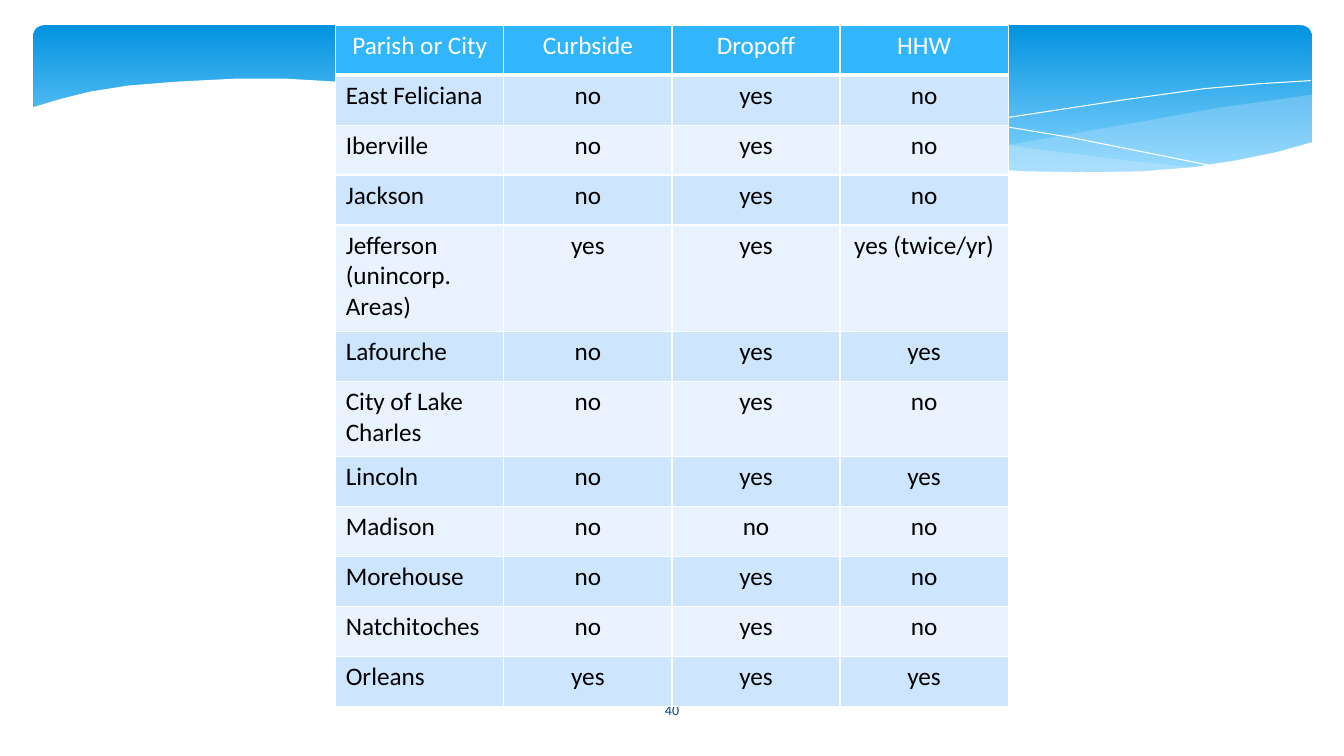
from lxml.etree import SubElement
from pptx import Presentation
from pptx.dml.color import RGBColor
from pptx.enum.shapes import MSO_SHAPE
from pptx.enum.text import MSO_ANCHOR, PP_ALIGN
from pptx.oxml.ns import qn
from pptx.util import Inches, Pt

COLORS = {
    "banner_top": "0293E0",
    "banner_bottom": "83D3FE",
    "haze": "C6E7FC",
    "white": "FFFFFF",
    "black": "000000",
    "page_number": "073E87",
    "header": "31B6FD",
    "odd_row": "CEE5FE",
    "even_row": "E8F3FF",
}
FONT = "Calibri"

RIGHT_HAZE = [
    (1267, 69), (1232, 74), (1175, 82), (1114, 93), (1040, 106), (972, 118),
    (908, 127), (849, 135), (907, 140), (976, 145), (1038, 147), (1093, 146),
    (1141, 142), (1185, 137), (1224, 129), (1268, 117), (1268, 69),
]
LONG_HAZE = [
    (1157, 142), (1083, 134), (1001, 124), (908, 109), (806, 91), (745, 81),
    (688, 72), (619, 64), (556, 58), (499, 55), (426, 55), (349, 61),
    (423, 69), (506, 81), (566, 91), (673, 110), (769, 125), (854, 136),
    (930, 143), (997, 147), (1057, 148), (1110, 146),
]
FALLING_LINE = [
    (379, 65), (414, 60), (466, 57), (522, 56), (592, 58), (677, 63),
    (778, 73), (894, 89), (1027, 111), (1177, 141),
]
RISING_LINE = [
    (785, 126), (863, 110), (964, 92), (1082, 74), (1161, 63), (1217, 58),
    (1267, 55),
]
WHITE_WAVE = [
    (1269, 116), (1233, 126), (1194, 134), (1150, 141), (1101, 145),
    (1045, 146), (982, 145), (911, 140), (830, 131), (739, 119), (638, 103),
    (563, 89), (488, 77), (420, 67), (357, 60), (300, 56), (249, 53),
    (202, 53), (143, 56), (94, 60), (56, 66), (28, 73), (-2, 82), (-2, 199),
    (1270, 199),
]

ROWS = [
    ("Parish or City", "Curbside", "Dropoff", "HHW"),
    ("East Feliciana", "no", "yes", "no"),
    ("Iberville", "no", "yes", "no"),
    ("Jackson", "no", "yes", "no"),
    ("Jefferson (unincorp. Areas)", "yes", "yes", "yes (twice/yr)"),
    ("Lafourche", "no", "yes", "yes"),
    ("City of Lake Charles", "no", "yes", "no"),
    ("Lincoln", "no", "yes", "yes"),
    ("Madison", "no", "no", "no"),
    ("Morehouse", "no", "yes", "no"),
    ("Natchitoches", "no", "yes", "no"),
    ("Orleans", "yes", "yes", "yes"),
]
TALL_ROWS = {4: 1.06, 6: 0.74}


def color(name):
    return RGBColor.from_string(COLORS[name])


def style_text(paragraph, size, color_name, alignment):
    paragraph.alignment = alignment
    for span in paragraph.runs:
        span.font.name = FONT
        span.font.size = Pt(size)
        span.font.bold = False
        span.font.color.rgb = color(color_name)


def add_outline(page, points, left, top, closed):
    builder = page.shapes.build_freeform(*points[0], scale=Inches(0.01))
    builder.add_line_segments(points[1:], close=closed)
    outline = builder.convert_to_shape(Inches(left), Inches(top))
    outline.shadow.inherit = False
    return outline


def add_area(page, points, left, top, color_name, opacity):
    area = add_outline(page, points, left, top, True)
    area.line.fill.background()
    area.fill.solid()
    area.fill.fore_color.rgb = color(color_name)
    if opacity < 100:
        fill_color = area.fill._xPr.find(qn("a:solidFill"))[0]
        SubElement(fill_color, qn("a:alpha"), val=str(opacity * 1000))


def add_hairline(page, points, left, top):
    hairline = add_outline(page, points, left, top, False)
    hairline.fill.background()
    hairline.line.color.rgb = color("white")
    hairline.line.width = Pt(0)


def add_banner(page, left, top, width, height):
    banner = page.shapes.add_shape(
        MSO_SHAPE.ROUNDED_RECTANGLE,
        Inches(left), Inches(top), Inches(width), Inches(height))
    banner.adjustments[0] = 0.07
    banner.shadow.inherit = False
    banner.line.fill.background()
    banner.fill.gradient()
    banner.fill.gradient_angle = 270
    stops = [(0, "banner_top"), (0.9, "banner_bottom")]
    for stop, (position, name) in zip(banner.fill.gradient_stops, stops):
        stop.position = position
        stop.color.rgb = color(name)
    add_area(page, RIGHT_HAZE, left, top, "haze", 29)
    add_area(page, LONG_HAZE, left, top, "haze", 40)
    add_hairline(page, FALLING_LINE, left, top)
    add_hairline(page, RISING_LINE, left, top)
    add_area(page, WHITE_WAVE, left, top, "white", 100)


def add_page_number(page, left, top, width, height):
    box = page.shapes.add_textbox(
        Inches(left), Inches(top), Inches(width), Inches(height))
    frame = box.text_frame
    frame.word_wrap = True
    frame.vertical_anchor = MSO_ANCHOR.MIDDLE
    frame.text = "40"
    style_text(frame.paragraphs[0], 10, "page_number", PP_ALIGN.CENTER)


def set_borders(cell, bottom_width):
    properties = cell._tc.get_or_add_tcPr()
    widths = {"a:lnL": 1, "a:lnR": 1, "a:lnT": 1, "a:lnB": bottom_width}
    for index, (tag, width) in enumerate(widths.items()):
        border = SubElement(properties, qn(tag), w=str(Pt(width)))
        fill = SubElement(border, qn("a:solidFill"))
        SubElement(fill, qn("a:srgbClr"), val=COLORS["white"])
        properties.insert(index, border)


def add_recycling_table(page, left, top, width, height):
    table = page.shapes.add_table(
        len(ROWS), len(ROWS[0]),
        Inches(left), Inches(top), Inches(width), Inches(height)).table
    plain_height = (height - sum(TALL_ROWS.values())) / (len(ROWS) - len(TALL_ROWS))
    for column in table.columns:
        column.width = Inches(width / len(ROWS[0]))
    for row_index, values in enumerate(ROWS):
        header = row_index == 0
        fill_name = "header" if header else ("even_row", "odd_row")[row_index % 2]
        table.rows[row_index].height = Inches(TALL_ROWS.get(row_index, plain_height))
        for column_index, value in enumerate(values):
            cell = table.cell(row_index, column_index)
            cell.text_frame.text = value
            centred = header or column_index > 0
            style_text(cell.text_frame.paragraphs[0], 18,
                       "white" if header else "black",
                       PP_ALIGN.CENTER if centred else PP_ALIGN.LEFT)
            cell.fill.solid()
            cell.fill.fore_color.rgb = color(fill_name)
            set_borders(cell, 3 if header else 1)


def main():
    deck = Presentation()
    deck.slide_width = Inches(13.33)
    deck.slide_height = Inches(7.5)
    page = deck.slides.add_slide(deck.slide_layouts[6])
    add_banner(page, 0.33, 0.25, 12.68, 1.56)
    add_page_number(page, 5.82, 6.84, 1.69, 0.4)
    add_recycling_table(page, 3.33, 0.25, 6.67, 6.76)
    deck.save("out.pptx")


if __name__ == "__main__":
    main()
